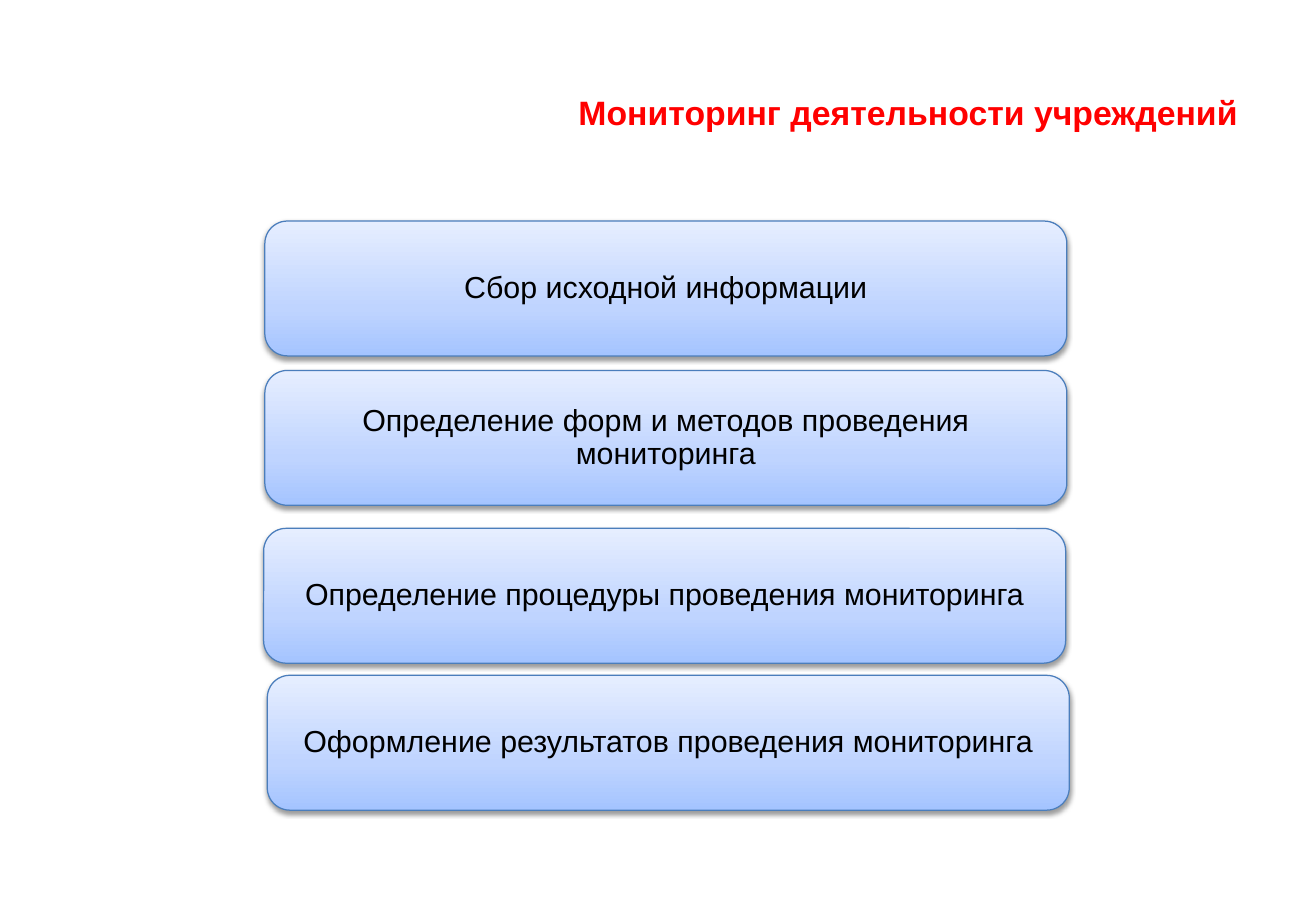
from lxml import etree
from pptx import Presentation
from pptx.dml.color import RGBColor
from pptx.enum import shapes, text
from pptx.oxml import ns
from pptx.util import Inches, Pt

RED = RGBColor(0xFF, 0x00, 0x00)
BLACK = RGBColor(0x00, 0x00, 0x00)
EDGE = RGBColor(0x4B, 0x7E, 0xBC)
SHADES = [
    (0, RGBColor(0xA4, 0xC4, 0xFF)),
    (35, RGBColor(0xBF, 0xD4, 0xFF)),
    (100, RGBColor(0xE6, 0xEE, 0xFF)),
]
STEPS = [
    (2.18, 1.82, "Сбор исходной информации"),
    (2.18, 3.05, "Определение форм и методов проведения мониторинга"),
    (2.17, 4.35, "Определение процедуры проведения мониторинга"),
    (2.2, 5.56, "Оформление результатов проведения мониторинга"),
]


def add(parent, tag, **attrs):
    node = etree.SubElement(parent, ns.qn(tag))
    for key, value in attrs.items():
        node.set(key, str(value))
    return node


def place(shape, box):
    shape.left, shape.top, shape.width, shape.height = map(Inches, box)


def write(frame, words, size, color, align, bold=False):
    frame.word_wrap = True
    frame.vertical_anchor = text.MSO_ANCHOR.MIDDLE
    para = frame.paragraphs[0]
    para.alignment = align
    run = para.add_run()
    run.text = words
    font = run.font
    font.name, font.size, font.bold = "Arial", Pt(size), bold
    font.color.rgb = color
    return para


def shade(shape):
    """Fill with the three-stop gradient, darkest at the bottom."""
    shape.fill.gradient()
    shape.fill.gradient_angle = 90
    stops = shape._element.spPr.find(".//" + ns.qn("a:gsLst"))
    for stop in list(stops):
        stops.remove(stop)
    for pos, color in SHADES:
        stop = add(stops, "a:gs", pos=pos * 1000)
        add(stop, "a:srgbClr", val=color)


def drop(shape):
    """Cast a soft shadow straight down."""
    shape.shadow.inherit = False
    effects = shape._element.spPr.find(ns.qn("a:effectLst"))
    outer = add(effects, "a:outerShdw", blurRad=Pt(3.1), dist=Pt(1.6),
                dir=5400000, rotWithShape=0)
    color = add(outer, "a:srgbClr", val=BLACK)
    add(color, "a:alpha", val=38000)


def add_title(slide, box):
    title = slide.shapes.title
    place(title, box)
    write(title.text_frame, "Мониторинг деятельности учреждений",
          20, RED, text.PP_ALIGN.RIGHT, True)


def add_step(slide, box, words):
    card = slide.shapes.add_shape(
        shapes.MSO_SHAPE.ROUNDED_RECTANGLE, *map(Inches, box))
    shade(card)
    card.line.color.rgb = EDGE
    card.line.width = Pt(0.75)
    drop(card)
    frame = card.text_frame
    frame.margin_left = frame.margin_right = Inches(0.07)
    frame.margin_top = frame.margin_bottom = Inches(0.07)
    para = write(frame, words, 18, BLACK, text.PP_ALIGN.CENTER)
    para.line_spacing = 0.9


def main():
    deck = Presentation()
    deck.slide_width, deck.slide_height = Inches(10.83), Inches(7.5)
    slide = deck.slides.add_slide(deck.slide_layouts[5])
    add_title(slide, (2.23, 0.3, 8.06, 1.25))
    for left, top, words in STEPS:
        add_step(slide, (left, top, 6.6, 1.11), words)
    deck.save("out.pptx")


if __name__ == "__main__":
    main()
